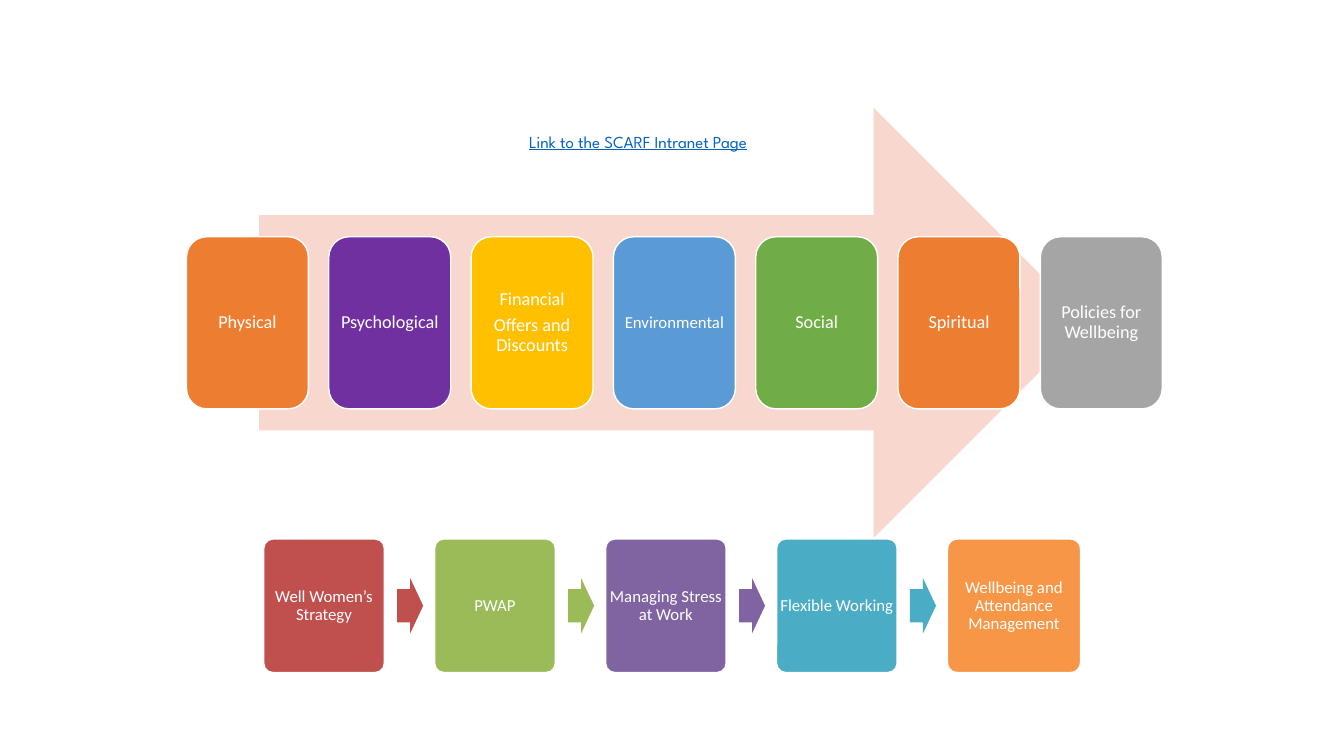
import pptx
import pptx.util
import pptx.dml.color
import pptx.enum.shapes
import pptx.enum.text

Pt = pptx.util.Pt
RGBColor = pptx.dml.color.RGBColor
MSO_SHAPE = pptx.enum.shapes.MSO_SHAPE
MSO_ANCHOR = pptx.enum.text.MSO_ANCHOR
PP_ALIGN = pptx.enum.text.PP_ALIGN

WHITE = RGBColor(0xFF, 0xFF, 0xFF)
BLUSH = RGBColor(0xF8, 0xD7, 0xCE)
ORANGE = RGBColor(0xED, 0x7D, 0x31)
VIOLET = RGBColor(0x70, 0x30, 0xA0)
GOLD = RGBColor(0xFF, 0xC0, 0x00)
BLUE = RGBColor(0x5B, 0x9B, 0xD5)
GREEN = RGBColor(0x70, 0xAD, 0x47)
GRAY = RGBColor(0xA5, 0xA5, 0xA5)
RED = RGBColor(0xC0, 0x50, 0x4D)
LIME = RGBColor(0x9B, 0xBB, 0x59)
PURPLE = RGBColor(0x80, 0x64, 0xA2)
TEAL = RGBColor(0x4B, 0xAC, 0xC6)
AMBER = RGBColor(0xF7, 0x96, 0x46)
LINK = RGBColor(0x05, 0x63, 0xC1)

PILLARS = [
    (["Physical"], ORANGE, 13),
    (["Psychological"], VIOLET, 13),
    (["Financial", "Offers and Discounts"], GOLD, 13),
    (["Environmental"], BLUE, 12),
    (["Social"], GREEN, 13),
    (["Spiritual"], ORANGE, 13),
    (["Policies for Wellbeing"], GRAY, 13),
]
STEPS = [
    ("Well Women’s Strategy", RED),
    ("PWAP", LIME),
    ("Managing Stress at Work", PURPLE),
    ("Flexible Working", TEAL),
    ("Wellbeing and Attendance Management", AMBER),
]


def set_all(target, formats):
    for name, value in formats.items():
        setattr(target, name, value)


def add_shape(s, kind, box, color, line_width=0, adjustments=()):
    sp = s.shapes.add_shape(kind, *[Pt(v) for v in box])
    sp.shadow.inherit = False
    sp.fill.solid()
    sp.fill.fore_color.rgb = color
    if line_width:
        sp.line.color.rgb = WHITE
        sp.line.width = Pt(line_width)
    else:
        sp.line.fill.background()
    for i, value in enumerate(adjustments):
        sp.adjustments[i] = value
    return sp


def write_label(sp, texts, size, side, after):
    tf = sp.text_frame
    set_all(tf, dict(word_wrap=True, vertical_anchor=MSO_ANCHOR.MIDDLE,
                     margin_left=Pt(side), margin_right=Pt(side),
                     margin_top=Pt(3.6), margin_bottom=Pt(3.6)))
    for i, text in enumerate(texts):
        p = tf.add_paragraph() if i else tf.paragraphs[0]
        set_all(p, dict(alignment=PP_ALIGN.CENTER, line_spacing=0.9,
                        space_after=Pt(after)))
        r = p.add_run()
        r.text = text
        set_all(r.font, dict(size=Pt(size), name="Calibri"))
        r.font.color.rgb = WHITE


def add_pillars(s, left, top, width, height):
    add_shape(s, MSO_SHAPE.RIGHT_ARROW,
              (left + 52, top, 592.5, height), BLUSH)
    card_width, card_height = 87.1, height * 0.4
    pitch = (width - card_width) / (len(PILLARS) - 1)
    card_top = top + (height - card_height) / 2
    for i, (texts, color, size) in enumerate(PILLARS):
        sp = add_shape(s, MSO_SHAPE.ROUNDED_RECTANGLE,
                       (left + i * pitch, card_top, card_width, card_height),
                       color, 1)
        write_label(sp, texts, size, 3.6, 4.5)


def add_link_text(s, left, top, width, height):
    tf = s.shapes.add_textbox(Pt(left), Pt(top), Pt(width), Pt(height)).text_frame
    tf.word_wrap = True
    r = tf.paragraphs[0].add_run()
    r.text = "Link to the SCARF Intranet Page"
    set_all(r.font, dict(size=Pt(12), name="League Spartan", underline=True))
    r.font.color.rgb = LINK


def add_steps(s, left, top, width, height):
    step_width, last_width, arrow_height = 87.1, 96, 39.6
    last = len(STEPS) - 1
    pitch = (width - last_width) / last
    for i, (text, color) in enumerate(STEPS):
        x = left + i * pitch
        sp = add_shape(s, MSO_SHAPE.ROUNDED_RECTANGLE,
                       (x, top, last_width if i == last else step_width, height),
                       color, 2, [0.08])
        write_label(sp, [text], 12, 0, 3)
        if i < last:
            add_shape(s, MSO_SHAPE.RIGHT_ARROW,
                      (x + 95.8, top + (height - arrow_height) / 2, 18.6, arrow_height),
                      color, 0, [0.6, 0.5])


def main():
    prs = pptx.Presentation()
    prs.slide_width, prs.slide_height = Pt(960), Pt(540)
    s = prs.slides.add_slide(prs.slide_layouts[6])
    add_pillars(s, 133.2, 76.9, 697, 307.4)
    add_link_text(s, 370.8, 90.7, 279.4, 21.6)
    add_steps(s, 187.9, 384.5, 584.4, 96.4)
    prs.save("out.pptx")


if __name__ == "__main__":
    main()
